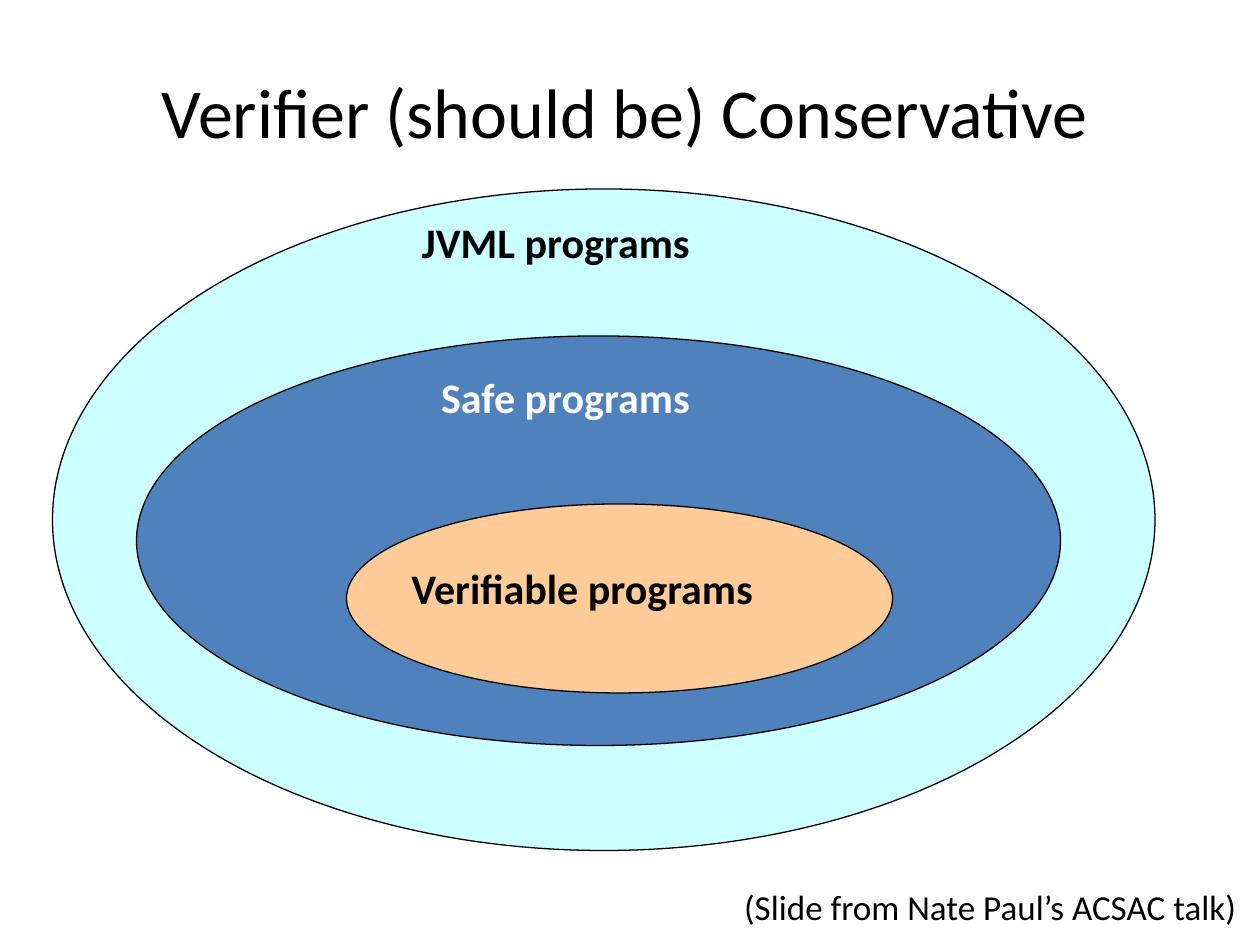
from typing import NamedTuple

from pptx import Presentation
from pptx.dml.color import RGBColor
from pptx.enum.shapes import MSO_SHAPE
from pptx.enum.text import MSO_ANCHOR, PP_ALIGN
from pptx.util import Pt

OVAL = MSO_SHAPE.OVAL
TOP, MIDDLE = MSO_ANCHOR.TOP, MSO_ANCHOR.MIDDLE
LEFT, CENTER, RIGHT = PP_ALIGN.LEFT, PP_ALIGN.CENTER, PP_ALIGN.RIGHT
FONT = "Calibri"
COLORS = {
    "black": "000000",
    "white": "FFFFFF",
    "aqua": "CCFFFF",
    "blue": "4F81BD",
    "peach": "FFCC99",
}


class Box(NamedTuple):
    left: float
    top: float
    width: float
    height: float


class Label(NamedTuple):
    text: str
    box: Box
    size: float = 24
    color: str = "black"
    bold: bool = False
    align: PP_ALIGN = LEFT
    anchor: MSO_ANCHOR = TOP


class Ring(NamedTuple):
    box: Box
    fill: str
    label: Label


TITLE = Label("Verifier (should be) Conservative", Box(10, 18, 694, 90),
              size=40, align=CENTER, anchor=MIDDLE)
CREDIT = Label("(Slide from Nate Paul’s ACSAC talk)", Box(368.5, 502.5, 345, 31.5),
               size=20, align=RIGHT)
RINGS = [
    Ring(Box(30, 108, 630, 378), "aqua",
         Label("JVML programs", Box(234, 120, 212.5, 36), bold=True)),
    Ring(Box(78, 192, 528, 234), "blue",
         Label("Safe programs", Box(245, 209, 162, 36), color="white", bold=True)),
    Ring(Box(198, 288, 312, 108), "peach",
         Label("Verifiable programs", Box(228, 318, 222, 36), bold=True)),
]


def rgb(name: str) -> RGBColor:
    return RGBColor.from_string(COLORS[name])


def add_label(slide, label: Label) -> None:
    frame = slide.shapes.add_textbox(*map(Pt, label.box)).text_frame
    frame.word_wrap = True
    frame.vertical_anchor = label.anchor
    frame.text = label.text
    line = frame.paragraphs[0]
    line.alignment = label.align
    font = line.runs[0].font
    font.name = FONT
    font.size = Pt(label.size)
    font.bold = label.bold
    font.color.rgb = rgb(label.color)


def add_ring(slide, ring: Ring) -> None:
    oval = slide.shapes.add_shape(OVAL, *map(Pt, ring.box))
    oval.shadow.inherit = False
    oval.fill.solid()
    oval.fill.fore_color.rgb = rgb(ring.fill)
    oval.line.color.rgb = rgb("black")
    oval.line.width = Pt(0.75)
    add_label(slide, ring.label)


def main() -> None:
    """Build the slide of nested program sets."""
    deck = Presentation()
    deck.slide_width, deck.slide_height = Pt(720), Pt(540)
    slide = deck.slides.add_slide(deck.slide_layouts[6])
    add_label(slide, TITLE)
    for ring in RINGS:
        add_ring(slide, ring)
    add_label(slide, CREDIT)
    deck.save("out.pptx")


if __name__ == "__main__":
    main()
